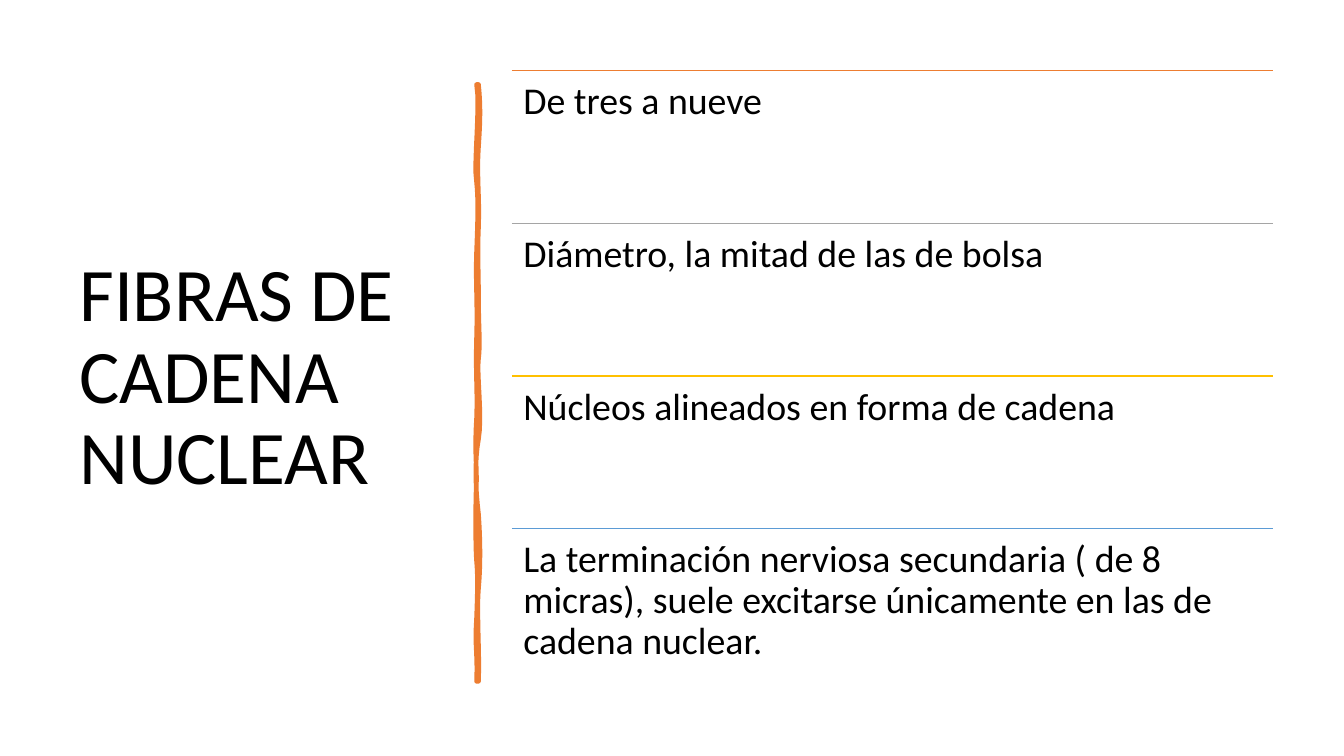
from dataclasses import dataclass

from lxml import etree
from pptx import Presentation
from pptx import util as u
from pptx.dml.color import RGBColor
from pptx.enum import shapes, text
from pptx.oxml.ns import qn


@dataclass(frozen=True)
class Theme:
    font: str = "Calibri"
    ink: str = "000000"
    accent: str = "ED7D31"
    rules: tuple = ("ED7D31", "A5A5A5", "FFC000", "5B9BD5")
    title_size: float = 54
    body_size: float = 27
    stroke_width: float = 3.25
    rule_width: float = 1


@dataclass(frozen=True)
class Box:
    """A region of the page, in centimetres."""
    left: float
    top: float
    width: float
    height: float


THEME = Theme()
TITLE = "FIBRAS DE CADENA NUCLEAR"
FACTS = (
    "De tres a nueve",
    "Diámetro, la mitad de las de bolsa",
    "Núcleos alineados en forma de cadena",
    "La terminación nerviosa secundaria ( de 8 micras), suele excitarse "
    "únicamente en las de cadena nuclear.",
)
# Each curve: first bend and its height, second bend and its height, end height.
RIGHT_EDGE = (
    (0.05, 0.46, 0.05, 0.89, 1.57), (-0.05, 2.26, 0.03, 2.82, 3.61),
    (-0.03, 4.39, 0, 4.52, 5.33), (0, 6.12, 0.05, 6.55, 6.91),
    (-0.05, 7.26, 0.1, 8.38, 8.94), (-0.1, 9.47, -0.08, 10.16, 10.82),
    (0.05, 11.48, 0.05, 12.19, 12.7), (-0.05, 13.18, 0.03, 14.38, 15.04),
)
LEFT_EDGE = (
    (0.03, 14.27, -0.05, 14.22, 13.44), (0.03, 12.67, 0.03, 12.34, 12.01),
    (-0.03, 11.68, -0.03, 10.44, 9.98), (0, 9.53, -0.05, 9.17, 8.41),
    (0.03, 7.67, -0.03, 7.34, 6.38), (0.03, 5.44, -0.03, 5, 4.22),
    (0.03, 3.4, 0.05, 2.95, 2.46), (-0.08, 2.01, 0.1, 0.51, 0),
)


def add_text(page, box, words, size, anchor=text.MSO_ANCHOR.TOP, inset=(0.25, 0.13)):
    shape = page.shapes.add_textbox(
        u.Cm(box.left), u.Cm(box.top), u.Cm(box.width), u.Cm(box.height))
    frame = shape.text_frame
    frame.word_wrap = True
    frame.vertical_anchor = anchor
    frame.margin_left = frame.margin_right = u.Cm(inset[0])
    frame.margin_top = frame.margin_bottom = u.Cm(inset[1])
    para = frame.paragraphs[0]
    para.line_spacing = 0.9
    span = para.add_run()
    span.text = words
    span.font.name = THEME.font
    span.font.size = u.Pt(size)
    span.font.color.rgb = RGBColor.from_string(THEME.ink)


def edge_points(x, y, curves, steps=8):
    """Sample a chain of cubic curves that sways around a vertical line."""
    points = []
    for bend1, y1, bend2, y2, end in curves:
        for step in range(1, steps + 1):
            t = step / steps
            s = 1 - t
            near, far = 3 * s * s * t, 3 * s * t * t
            points.append((u.Cm(x + near * bend1 + far * bend2),
                           u.Cm(s ** 3 * y + near * y1 + far * y2 + t ** 3 * end)))
        y = end
    return points


def add_brush_stroke(page, box):
    points = [(u.Cm(box.width), 0)]
    points += edge_points(box.width, 0, RIGHT_EDGE)
    points.append((0, u.Cm(box.height)))
    points += edge_points(0, box.height, LEFT_EDGE)
    builder = page.shapes.build_freeform(*points[0])
    builder.add_line_segments(points[1:], close=True)
    stroke = builder.convert_to_shape(u.Cm(box.left), u.Cm(box.top))
    stroke.shadow.inherit = False
    color = RGBColor.from_string(THEME.accent)
    stroke.fill.solid()
    stroke.fill.fore_color.rgb = color
    stroke.line.color.rgb = color
    stroke.line.width = u.Pt(THEME.stroke_width)
    etree.SubElement(stroke.line._get_or_add_ln(), qn("a:round"))


def add_rule(page, left, top, width, color):
    rule = page.shapes.add_connector(
        shapes.MSO_CONNECTOR.STRAIGHT,
        u.Cm(left), u.Cm(top), u.Cm(left + width), u.Cm(top))
    rule.line.color.rgb = RGBColor.from_string(color)
    rule.line.width = u.Pt(THEME.rule_width)
    etree.SubElement(rule._element.spPr, qn("a:effectLst"))


def add_fact_list(page, box):
    """Divide the box into equal rows, each under a coloured rule."""
    row_height = box.height / len(FACTS)
    for index, (fact, color) in enumerate(zip(FACTS, THEME.rules)):
        top = box.top + index * row_height
        add_rule(page, box.left, top, box.width, color)
        add_text(page, Box(box.left, top, box.width, row_height), fact,
                 THEME.body_size, inset=(0.29, 0.29))


def main():
    deck = Presentation()
    deck.slide_width, deck.slide_height = u.Cm(33.87), u.Cm(19.05)
    page = deck.slides.add_slide(deck.slide_layouts[6])
    add_text(page, Box(1.75, 1.78, 9.5, 15.52), TITLE, THEME.title_size,
             anchor=text.MSO_ANCHOR.MIDDLE)
    add_brush_stroke(page, Box(12.01, 2.13, 0.05, 15.04))
    add_fact_list(page, Box(12.9, 1.78, 19.18, 15.38))
    deck.save("out.pptx")


if __name__ == "__main__":
    main()
